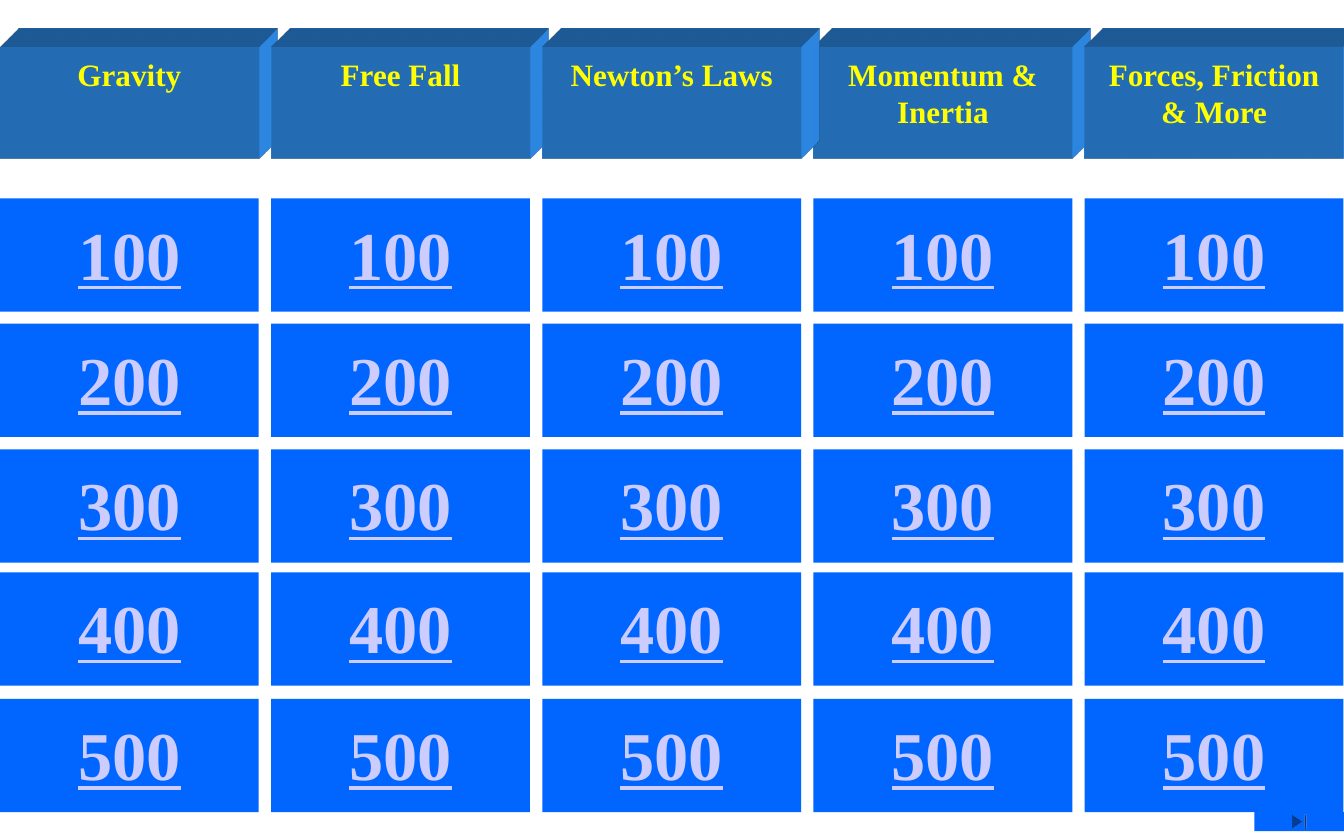
import pptx
import pptx.util
import pptx.dml.color
import pptx.enum.shapes
import pptx.enum.text
import lxml.etree

Cm, Pt = pptx.util.Cm, pptx.util.Pt
Rgb = pptx.dml.color.RGBColor.from_string
Kind = pptx.enum.shapes.MSO_SHAPE
Align = pptx.enum.text.PP_ALIGN
Anchor = pptx.enum.text.MSO_ANCHOR

# Theme: colours and type
theme = {
    "tile": "0066FF", "head": "3399FF",
    "score": "CCCCFF", "title": "FFFF00",
    "score font": {"name": "Times New Roman", "size": Pt(44), "bold": True, "underline": True},
    "title font": {"name": "Times New Roman", "size": Pt(20), "bold": True},
}
frame = {"word_wrap": True, "vertical_anchor": Anchor.TOP}

# Oblique depth of the topic blocks
space = "http://schemas.openxmlformats.org/drawingml/2006/main"
depth = f"""<a:spPr xmlns:a="{space}">
<a:scene3d><a:camera prst="legacyObliqueTopRight"/><a:lightRig rig="legacyFlat3" dir="b"/></a:scene3d>
<a:sp3d extrusionH="430200" prstMaterial="legacyMatte">
<a:bevelT w="13500" h="13500" prst="angle"/><a:bevelB w="13500" h="13500" prst="angle"/>
<a:extrusionClr><a:srgbClr val="{theme['head']}"/></a:extrusionClr>
</a:sp3d></a:spPr>"""


def block(kind, left, top, width, height, fill):
    shape = slide.shapes.add_shape(kind, Cm(left), Cm(top), Cm(width), Cm(height))
    shape.shadow.inherit = False
    shape.fill.solid()
    shape.fill.fore_color.rgb = Rgb(theme[fill])
    shape.line.fill.background()
    return shape


def label(shape, text, role):
    box = shape.text_frame
    para = box.paragraphs[0]
    para.alignment = Align.CENTER
    run = para.add_run()
    run.text = text
    run.font.color.rgb = Rgb(theme[role])
    for item, values in ((box, frame), (run.font, theme[role + " font"])):
        for key, value in values.items():
            setattr(item, key, value)


deck = pptx.Presentation()
deck.slide_width, deck.slide_height = Cm(30.48), Cm(19.05)
slide = deck.slides.add_slide(deck.slide_layouts[6])

# Grid
wide, step = 5.87, 6.15
tops = [4.5, 7.34, 10.19, 12.98, 15.85]
topics = ["Gravity", "Free Fall", "Newton’s Laws", "Momentum & Inertia", "Forces, Friction & More"]

# Score tiles
for row, top in enumerate(tops, 1):
    for col in range(len(topics)):
        tile = block(Kind.RECTANGLE, col * step, top, wide, 2.57, "tile")
        tile.text_frame.margin_top = Cm(0.3)
        label(tile, str(row * 100), "score")

# Topic blocks, the middle one in front
for col in (0, 1, 3, 4, 2):
    head = block(Kind.RECTANGLE, col * step, 1.06, wide, 2.54, "head")
    head.text_frame.margin_top = Cm(0.2)
    label(head, topics[col], "title")
    for part in lxml.etree.fromstring(depth):
        head._element.spPr.append(part)

# Button to the end
block(Kind.ACTION_BUTTON_END, 28.45, 18.42, 2.03, 0.43, "tile")

deck.save("out.pptx")
